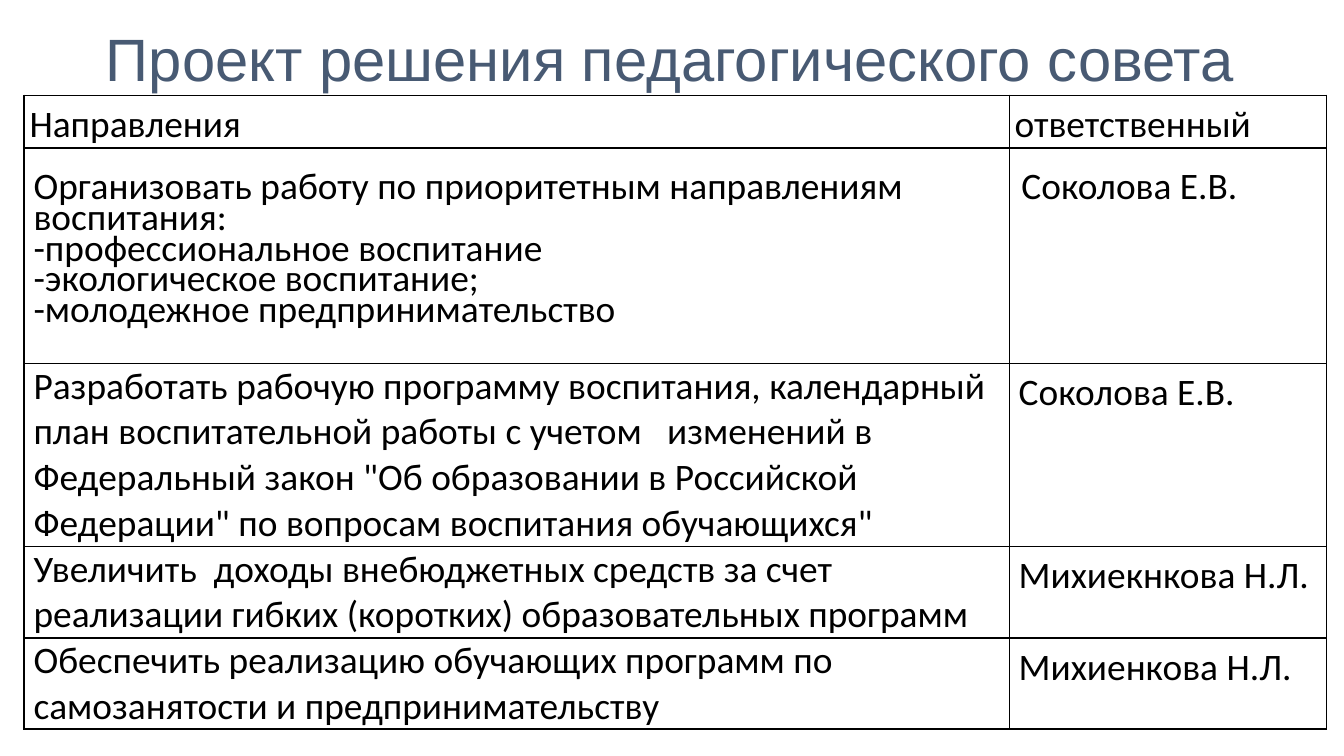
from dataclasses import dataclass

from lxml import etree
from pptx import Presentation
from pptx.dml.color import RGBColor
from pptx.enum.text import MSO_ANCHOR, PP_ALIGN
from pptx.oxml.ns import qn
from pptx.util import Inches, Pt

TOP = MSO_ANCHOR.TOP
CENTER = PP_ALIGN.CENTER
COLORS = {"title": "485A73", "text": "000000", "border": "000000"}
WIDTH = Inches(10)
HEIGHT = WIDTH * 9 // 16
LINE = 24.5
TIGHT = 16.5
LOOSE = 1.15
COLUMNS = (7.33, 2.36)
SIDES = ("lnL", "lnR", "lnT", "lnB")


@dataclass(frozen=True)
class Entry:
    paragraphs: tuple
    spacing: object = 1.0
    inset: float = 0.07
    top: float = 0
    indent: float = 0


@dataclass(frozen=True)
class Row:
    height: float
    task: Entry
    person: Entry


ROWS = (
    Row(
        LOOSE * LINE,
        Entry(("Направления",), LOOSE, 0.04),
        Entry(("ответственный",), LOOSE, 0.04),
    ),
    Row(
        7 * TIGHT,
        Entry(
            (
                "Организовать работу по приоритетным направлениям воспитания:",
                "-профессиональное воспитание",
                "-экологическое воспитание;",
                "-молодежное предпринимательство",
            ),
            Pt(TIGHT),
            top=TIGHT,
        ),
        Entry(("Соколова Е.В.",), Pt(TIGHT), top=TIGHT, indent=0.02),
    ),
    Row(
        4 * LINE,
        Entry((
            "Разработать рабочую программу воспитания, календарный план "
            "воспитательной работы с учетом   изменений в Федеральный закон "
            '"Об образовании в Российской Федерации" по вопросам воспитания '
            'обучающихся"',
        )),
        Entry(("Соколова Е.В.",), LOOSE),
    ),
    Row(
        2 * LINE,
        Entry((
            "Увеличить  доходы внебюджетных средств за счет реализации "
            "гибких (коротких) образовательных программ",
        )),
        Entry(("Михиекнкова Н.Л.",), LOOSE),
    ),
    Row(
        2 * LINE,
        Entry((
            "Обеспечить реализацию обучающих программ по самозанятости "
            "и предпринимательству",
        )),
        Entry(("Михиенкова Н.Л.",), LOOSE),
    ),
)


def apply(target, values: dict) -> None:
    for name, value in values.items():
        setattr(target, name, value)


def write(para, text: str, font: str, size: float, color: str) -> None:
    span = para.add_run()
    span.text = text
    apply(span.font, {"name": font, "size": Pt(size)})
    span.font.color.rgb = RGBColor.from_string(COLORS[color])


def add_title(page, text: str) -> None:
    box = page.shapes.add_textbox(Inches(0.68), Inches(0.17), Inches(8.62), Inches(1.09))
    apply(box.text_frame, {"word_wrap": True, "vertical_anchor": TOP})
    para = box.text_frame.paragraphs[0]
    apply(para, {"alignment": CENTER, "line_spacing": 0.9})
    write(para, text, "Arial", 32, "title")


def add_borders(cell) -> None:
    properties = cell._tc.get_or_add_tcPr()
    for side in SIDES:
        line = etree.SubElement(properties, qn(f"a:{side}"), w=str(Pt(1)))
        fill = etree.SubElement(line, qn("a:solidFill"))
        etree.SubElement(fill, qn("a:srgbClr"), val=COLORS["border"])


def fill_cell(cell, entry: Entry) -> None:
    add_borders(cell)
    cell.fill.background()
    apply(cell, {
        "margin_left": Inches(entry.inset),
        "margin_right": Inches(entry.inset),
        "margin_top": Pt(entry.top),
        "margin_bottom": 0,
        "vertical_anchor": TOP,
    })
    frame = cell.text_frame
    for index, text in enumerate(entry.paragraphs):
        para = frame.add_paragraph() if index else frame.paragraphs[0]
        para.line_spacing = entry.spacing
        if entry.indent:
            para._p.get_or_add_pPr().set("indent", str(Inches(entry.indent)))
        write(para, text, "Calibri", 20, "text")


def add_decisions(page, rows: tuple) -> None:
    height = Pt(sum(row.height for row in rows))
    frame = page.shapes.add_table(
        len(rows), len(COLUMNS), Inches(0.18), Inches(0.71), Inches(sum(COLUMNS)), height
    )
    table = frame.table
    apply(table, {"first_row": False, "horz_banding": False})
    for column, width in zip(table.columns, COLUMNS):
        column.width = Inches(width)
    for index, row in enumerate(rows):
        table.rows[index].height = Pt(row.height)
        for column, entry in enumerate((row.task, row.person)):
            fill_cell(table.cell(index, column), entry)


def main() -> None:
    deck = Presentation()
    apply(deck, {"slide_width": WIDTH, "slide_height": HEIGHT})
    page = deck.slides.add_slide(deck.slide_layouts[6])
    add_title(page, "Проект решения педагогического совета")
    add_decisions(page, ROWS)
    deck.save("out.pptx")


if __name__ == "__main__":
    main()
